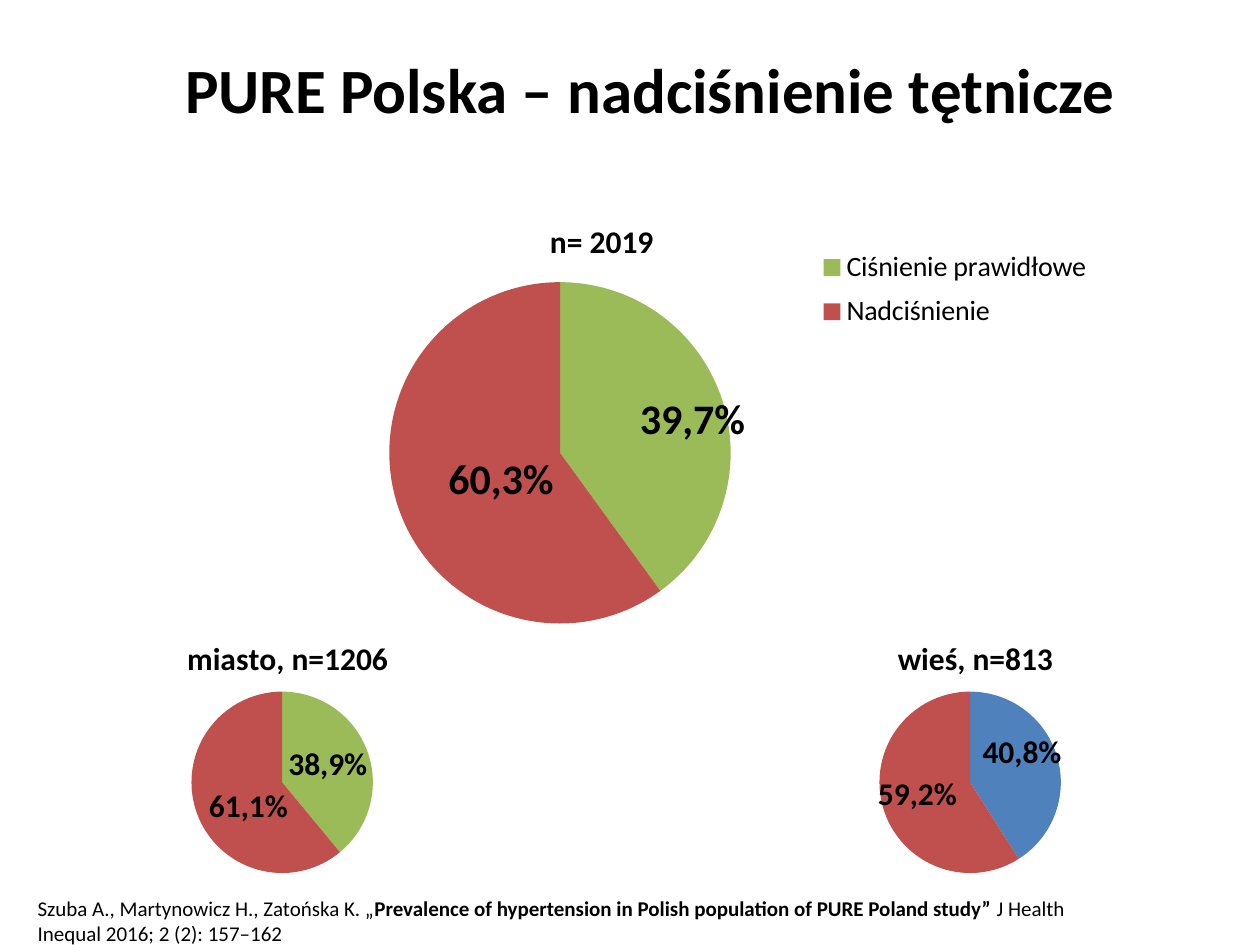
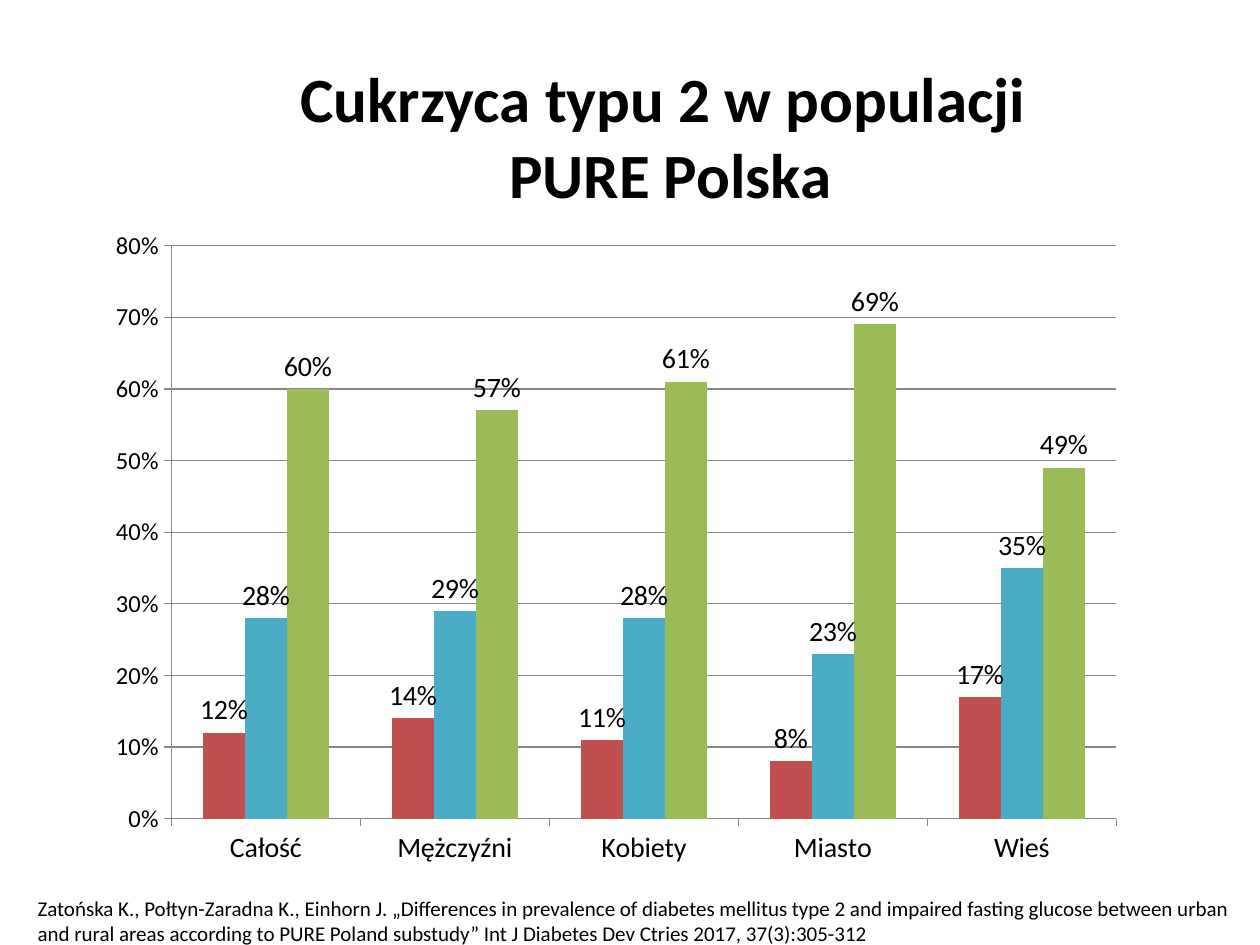
from dataclasses import dataclass
from typing import Optional

from lxml import etree
from pptx import Presentation
from pptx import util as u
from pptx.chart import data as chart_data
from pptx.dml.color import RGBColor
from pptx.enum import chart as ch, text
from pptx.oxml.ns import qn

PX = 9144
FONT = "Calibri"
BLACK = RGBColor(0x00, 0x00, 0x00)
GRID_GREY = RGBColor(0x86, 0x86, 0x86)
GREEN = RGBColor(0x9B, 0xBB, 0x59)
RED = RGBColor(0xC0, 0x50, 0x4D)
BLUE = RGBColor(0x4F, 0x81, 0xBD)
TEAL = RGBColor(0x4B, 0xAC, 0xC6)


@dataclass(frozen=True)
class Box:
    left: int
    top: int
    width: int
    height: int

    def emu(self) -> tuple:
        return tuple(u.Emu(v * PX) for v in (self.left, self.top, self.width, self.height))


@dataclass(frozen=True)
class Share:
    label: str
    left: int
    top: int


@dataclass(frozen=True)
class PiePanel:
    heading: str
    frame: Box
    heading_box: Box
    disc: Box
    categories: tuple
    values: tuple
    colors: tuple
    shares: tuple
    share_size: int
    share_box: tuple
    legend: Optional[Box] = None


@dataclass(frozen=True)
class Measure:
    name: str
    values: tuple
    color: RGBColor


PIES = (
    PiePanel("n= 2019", Box(241, 153, 638, 356), Box(432, 170, 82, 30),
             Box(309, 224, 271, 271), ("Ciśnienie prawidłowe", "Nadciśnienie"),
             (40, 60), (GREEN, RED),
             (Share("60,3%", 346, 354), Share("39,7%", 498, 307)), 24, (104, 50),
             Box(643, 191, 230, 78)),
    PiePanel("miasto, n=1206", Box(42, 485, 363, 221), Box(144, 501, 160, 30),
             Box(152, 549, 144, 144), ("1", "2"), (39, 61), (GREEN, RED),
             (Share("38,9%", 219, 586), Share("61,1%", 156, 619)), 18, (83, 40)),
    PiePanel("wieś, n=813", Box(572, 485, 397, 221), Box(708, 501, 124, 30),
             Box(698, 549, 144, 144), ("1", "2"), (41, 59), (BLUE, RED),
             (Share("40,8%", 770, 576), Share("59,2%", 687, 609)), 18, (83, 40)),
)

GROUPS = ("Całość", "Mężczyźni", "Kobiety", "Miasto", "Wieś")
MEASURES = (
    Measure("cukrzyca", (0.12, 0.14, 0.11, 0.08, 0.17), RED),
    Measure("IFG", (0.28, 0.29, 0.28, 0.23, 0.35), TEAL),
    Measure("prawidłowa glikemia", (0.6, 0.57, 0.61, 0.69, 0.49), GREEN),
)


def style(font, size: int, bold: bool = False) -> None:
    font.name = FONT
    font.size = u.Pt(size)
    font.bold = bold
    font.color.rgb = BLACK


def write(frame, content: str, *, size: int, bold: bool = False, align=None,
          emphasis: str = "") -> None:
    paragraph = frame.paragraphs[0]
    paragraph.alignment = align
    before, _, after = content.partition(emphasis) if emphasis else (content, "", "")
    for part, weight in ((before, bold), (emphasis, True), (after, bold)):
        for index, line in enumerate(part.split("\n") if part else ()):
            if index:
                paragraph.add_line_break()
            run = paragraph.add_run()
            run.text = line
            style(run.font, size, weight)


def add_title(slide, content: str, box: Box) -> None:
    title = slide.shapes.title
    title.left, title.top, title.width, title.height = box.emu()
    title.text_frame.vertical_anchor = text.MSO_ANCHOR.MIDDLE
    title.text_frame.auto_size = text.MSO_AUTO_SIZE.NONE
    write(title.text_frame, content, size=36, bold=True, align=text.PP_ALIGN.CENTER)


def add_text(slide, content: str, box: Box, *, wrap: bool = True, **fmt) -> None:
    frame = slide.shapes.add_textbox(*box.emu()).text_frame
    frame.word_wrap = wrap
    frame.auto_size = text.MSO_AUTO_SIZE.SHAPE_TO_FIT_TEXT
    write(frame, content, **fmt)


def add_citation(slide, content: str, width: int, emphasis: str = "") -> None:
    add_text(slide, content, Box(20, 706, width, 50), size=12, emphasis=emphasis)


def place(chart, tag: str, frame: Box, part: Box) -> None:
    parent = chart.element.find(".//" + qn(tag))
    for old in parent.findall(qn("c:layout")):
        parent.remove(old)
    layout = etree.Element(qn("c:layout"))
    manual = etree.SubElement(layout, qn("c:manualLayout"))
    settings = {"xMode": "edge", "yMode": "edge",
                "x": (part.left - frame.left) / frame.width,
                "y": (part.top - frame.top) / frame.height}
    if tag == "c:plotArea":
        settings = {"layoutTarget": "inner", **settings}
    if tag != "c:title":
        settings.update(w=part.width / frame.width, h=part.height / frame.height)
    for name, value in settings.items():
        shown = value if isinstance(value, str) else f"{value:.4f}"
        etree.SubElement(manual, qn("c:" + name)).set("val", shown)
    leading = (qn("c:tx"), qn("c:legendPos"))
    parent.insert(sum(child.tag in leading for child in parent), layout)


def add_chart(slide, kind, frame: Box, categories: tuple, series: dict,
              number_format: str = "General"):
    data = chart_data.CategoryChartData(number_format=number_format)
    data.categories = categories
    for name, values in series.items():
        data.add_series(name, values)
    chart = slide.shapes.add_chart(kind, *frame.emu(), data).chart
    style(chart.font, 10)
    chart.has_title = False
    chart.has_legend = False
    return chart


def paint(target, color: RGBColor) -> None:
    target.format.fill.solid()
    target.format.fill.fore_color.rgb = color


def add_pie(slide, pie: PiePanel) -> None:
    chart = add_chart(slide, ch.XL_CHART_TYPE.PIE, pie.frame, pie.categories,
                      {"Series 1": pie.values})
    chart.has_title = True
    write(chart.chart_title.text_frame, pie.heading, size=18, bold=True)
    chart.chart_title.include_in_layout = False
    place(chart, "c:title", pie.frame, pie.heading_box)
    place(chart, "c:plotArea", pie.frame, pie.disc)
    for index, color in enumerate(pie.colors):
        paint(chart.plots[0].series[0].points[index], color)
    if pie.legend:
        chart.has_legend = True
        chart.legend.position = ch.XL_LEGEND_POSITION.RIGHT
        chart.legend.include_in_layout = False
        style(chart.legend.font, 16)
        place(chart, "c:legend", pie.frame, pie.legend)
    for share in pie.shares:
        add_text(slide, share.label, Box(share.left, share.top, *pie.share_box),
                 wrap=False, size=pie.share_size, bold=True)


def add_columns(slide, frame: Box, plot_box: Box) -> None:
    chart = add_chart(slide, ch.XL_CHART_TYPE.COLUMN_CLUSTERED, frame, GROUPS,
                      {m.name: m.values for m in MEASURES}, "0%")
    place(chart, "c:plotArea", frame, plot_box)
    plot = chart.plots[0]
    plot.gap_width = 150
    plot.overlap = 0
    plot.vary_by_categories = False
    for series, measure in zip(plot.series, MEASURES):
        paint(series, measure.color)
        labels = series.data_labels
        labels.show_value = True
        labels.number_format = "0%"
        labels.number_format_is_linked = False
        labels.position = ch.XL_LABEL_POSITION.OUTSIDE_END
        style(labels.font, 16)
    scale = chart.value_axis
    scale.minimum_scale, scale.maximum_scale, scale.major_unit = 0, 0.8, 0.1
    scale.has_major_gridlines = True
    scale.major_gridlines.format.line.color.rgb = GRID_GREY
    scale.tick_labels.number_format = "0%"
    scale.tick_labels.number_format_is_linked = False
    for axis, size in ((chart.category_axis, 16), (scale, 14)):
        axis.major_tick_mark = ch.XL_TICK_MARK.OUTSIDE
        axis.format.line.color.rgb = GRID_GREY
        style(axis.tick_labels.font, size)


def build_hypertension(slide) -> None:
    add_title(slide, "PURE Polska – nadciśnienie tętnicze", Box(20, 8, 992, 125))
    for pie in PIES:
        add_pie(slide, pie)
    study = "Prevalence of hypertension in Polish population of PURE Poland study” "
    add_citation(slide, f"Szuba A., Martynowicz H., Zatońska K. „{study}"
                 "J Health Inequal 2016; 2 (2): 157–162", 882, emphasis=study)


def build_diabetes(slide) -> None:
    add_title(slide, "Cukrzyca typu 2 w populacji \nPURE Polska", Box(114, 60, 836, 95))
    add_columns(slide, Box(83, 178, 819, 528), Box(136, 195, 750, 455))
    add_citation(slide, "Zatońska K., Połtyn-Zaradna K., Einhorn J. „Differences in "
                 "prevalence of diabetes mellitus type 2 and impaired fasting glucose "
                 "between urban and rural areas according to PURE Poland substudy” "
                 "Int J Diabetes Dev Ctries 2017, 37(3):305-312", 969)


def main() -> None:
    deck = Presentation()
    deck.slide_width, deck.slide_height = u.Emu(1000 * PX), u.Emu(750 * PX)
    title_only = deck.slide_layouts[5]
    for build in (build_hypertension, build_diabetes):
        build(deck.slides.add_slide(title_only))
    deck.save("out.pptx")


if __name__ == "__main__":
    main()
